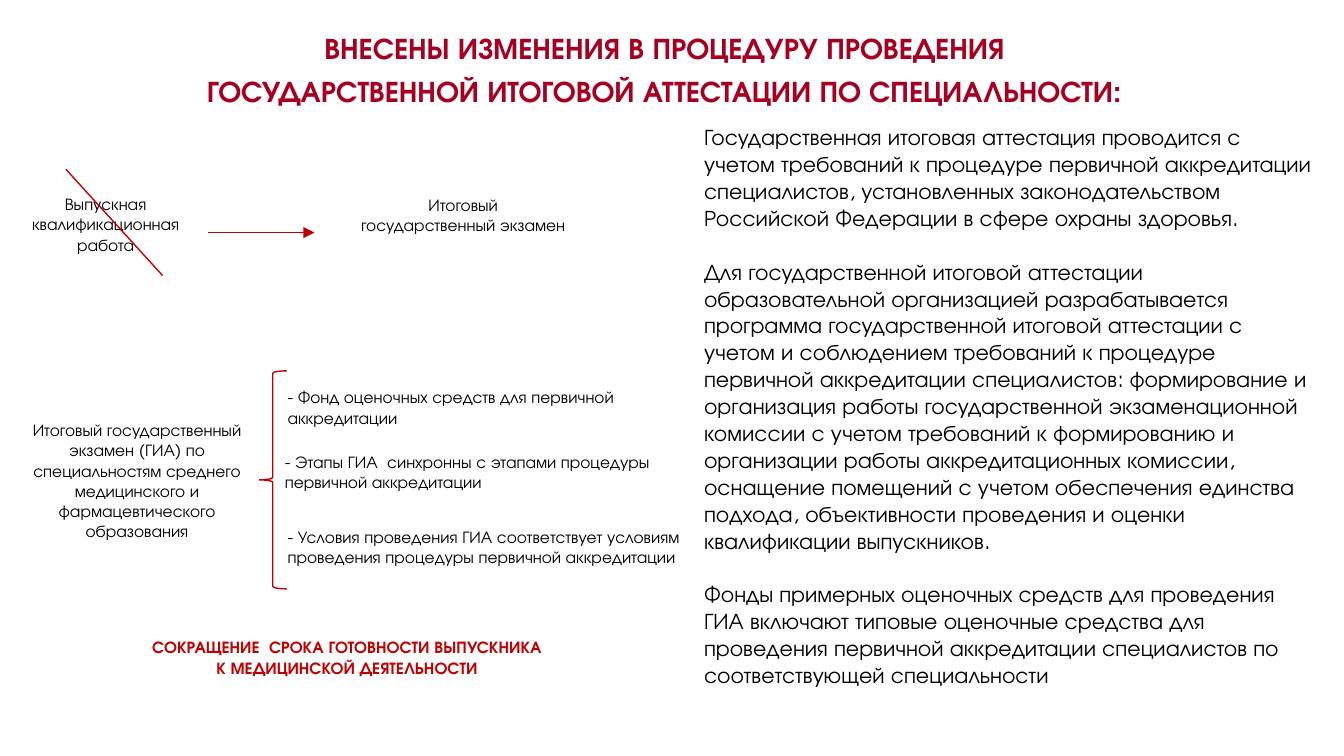
from lxml import etree
from pptx import Presentation
from pptx.dml.color import RGBColor
from pptx.enum.shapes import MSO_CONNECTOR, MSO_SHAPE
from pptx.enum.text import MSO_ANCHOR, PP_ALIGN
from pptx.oxml.ns import qn
from pptx.util import Pt

RECT, BRACE = MSO_SHAPE.RECTANGLE, MSO_SHAPE.LEFT_BRACE
LINE = MSO_CONNECTOR.STRAIGHT
LEFT, CENTER = PP_ALIGN.LEFT, PP_ALIGN.CENTER
MIDDLE = MSO_ANCHOR.MIDDLE
FONT = "TeX Gyre Adventor"
WINE = RGBColor(0xA5, 0x00, 0x21)
RED = RGBColor(0xC0, 0x00, 0x00)
BLACK = RGBColor(0, 0, 0)
WHITE = RGBColor(255, 255, 255)

prs = Presentation()
prs.slide_width, prs.slide_height = Pt(720), Pt(405)
slide = prs.slides.add_slide(prs.slide_layouts[6])
shapes = slide.shapes


def write(shape, text, size, color=BLACK, align=LEFT, bold=False):
    frame = shape.text_frame
    frame.text = text
    frame.word_wrap = True
    for para in frame.paragraphs:
        para.alignment = align
        for run in para.runs:
            font = run.font
            font.name, font.size, font.bold = FONT, Pt(size), bold
            font.color.rgb = color
    return frame


def add_box(x, y, w, h, text, align=CENTER, low=0, color=BLACK, bold=False):
    box = shapes.add_shape(RECT, Pt(x), Pt(y), Pt(w), Pt(h))
    box.shadow.inherit = False
    box.fill.solid()
    box.fill.fore_color.rgb = WHITE
    box.line.color.rgb = WHITE
    box.line.width = Pt(0.75)
    frame = write(box, text, 9, color, align, bold)
    frame.vertical_anchor = MIDDLE
    frame.margin_left = frame.margin_right = frame.margin_top = 0
    frame.margin_bottom = Pt(low)
    return box


# Title
title = shapes.add_textbox(Pt(21.6), Pt(15.1), Pt(669), Pt(47))
frame = write(title, "ВНЕСЕНЫ ИЗМЕНЕНИЯ В ПРОЦЕДУРУ ПРОВЕДЕНИЯ\n"
              "ГОСУДАРСТВЕННОЙ ИТОГОВОЙ АТТЕСТАЦИИ ПО СПЕЦИАЛЬНОСТИ:",
              16, WINE, CENTER, True)
frame.margin_left = frame.margin_right = Pt(5)
frame.margin_top = frame.margin_bottom = Pt(2.9)
for para in frame.paragraphs:
    para.line_spacing = 0.9
    para.space_after = Pt(5.6)

# Thesis replaced by the state exam
thesis = add_box(1.5, 110.9, 110.2, 27.4,
                 "Выпускная квалификационная работа", low=9)
add_box(193, 105.8, 110.2, 27.4, "Итоговый государственный экзамен", low=9)

# Strike-out and arrow
strike = shapes.add_connector(LINE, Pt(35.3), Pt(90.7), Pt(87.1), Pt(147.6))
arrow = shapes.add_connector(LINE, Pt(111.7), Pt(124.6), Pt(168.5), Pt(124.6))
arrow.begin_connect(thesis, 3)
for link in (strike, arrow):
    link.line.color.rgb = RED
    link.line.width = Pt(0.75)
    etree.SubElement(link._element.spPr, qn("a:effectLst"))
stroke = arrow._element.spPr.find(qn("a:ln"))
etree.SubElement(stroke, qn("a:tailEnd"), type="triangle")

# Features of the exam
for x, y, w, low, text in (
    (154.1, 204.5, 221, 0,
     "- Фонд оценочных средств для первичной аккредитации"),
    (152.6, 244.1, 215.3, 10,
     "- Этапы ГИА  синхронны с этапами процедуры первичной аккредитации"),
    (154.1, 284.4, 215.3, 10,
     "- Условия проведения ГИА соответствует условиям "
     "проведения процедуры первичной аккредитации"),
):
    add_box(x, y, w, 27.4, text, LEFT, low)

# Brace and its label
brace = shapes.add_shape(BRACE, Pt(138.6), Pt(198.7), Pt(15), Pt(116.8))
brace.shadow.inherit = False
brace.fill.background()
brace.line.color.rgb = RED
brace.line.width = Pt(0.75)
add_box(8.6, 218.2, 129.6, 78.5,
        "Итоговый государственный экзамен (ГИА) по специальностям "
        "среднего медицинского и фармацевтического образования")

# Explanation on the right
points = (
    "Государственная итоговая аттестация проводится с учетом требований к "
    "процедуре первичной аккредитации специалистов, установленных "
    "законодательством Российской Федерации в сфере охраны здоровья.",
    "Для государственной итоговой аттестации образовательной организацией "
    "разрабатывается программа государственной итоговой аттестации с учетом "
    "и соблюдением требований к процедуре первичной аккредитации "
    "специалистов: формирование и организация работы государственной "
    "экзаменационной комиссии с учетом требований к формированию и "
    "организации работы аккредитационных комиссии, оснащение помещений с "
    "учетом обеспечения единства подхода, объективности проведения и оценки "
    "квалификации выпускников.",
    "Фонды примерных оценочных средств для проведения ГИА включают типовые "
    "оценочные средства для проведения первичной аккредитации специалистов "
    "по соответствующей специальности",
)
notes = shapes.add_textbox(Pt(370.1), Pt(62.6), Pt(342), Pt(342))
frame = write(notes, "\n".join(points), 12)
for para in frame.paragraphs[1:]:
    para.space_before = Pt(14.4)

# Conclusion
add_box(1.5, 338.4, 368.6, 27.4,
        "СОКРАЩЕНИЕ  СРОКА ГОТОВНОСТИ ВЫПУСКНИКА\n"
        "К МЕДИЦИНСКОЙ ДЕЯТЕЛЬНОСТИ", color=RED, bold=True)

prs.save("out.pptx")
